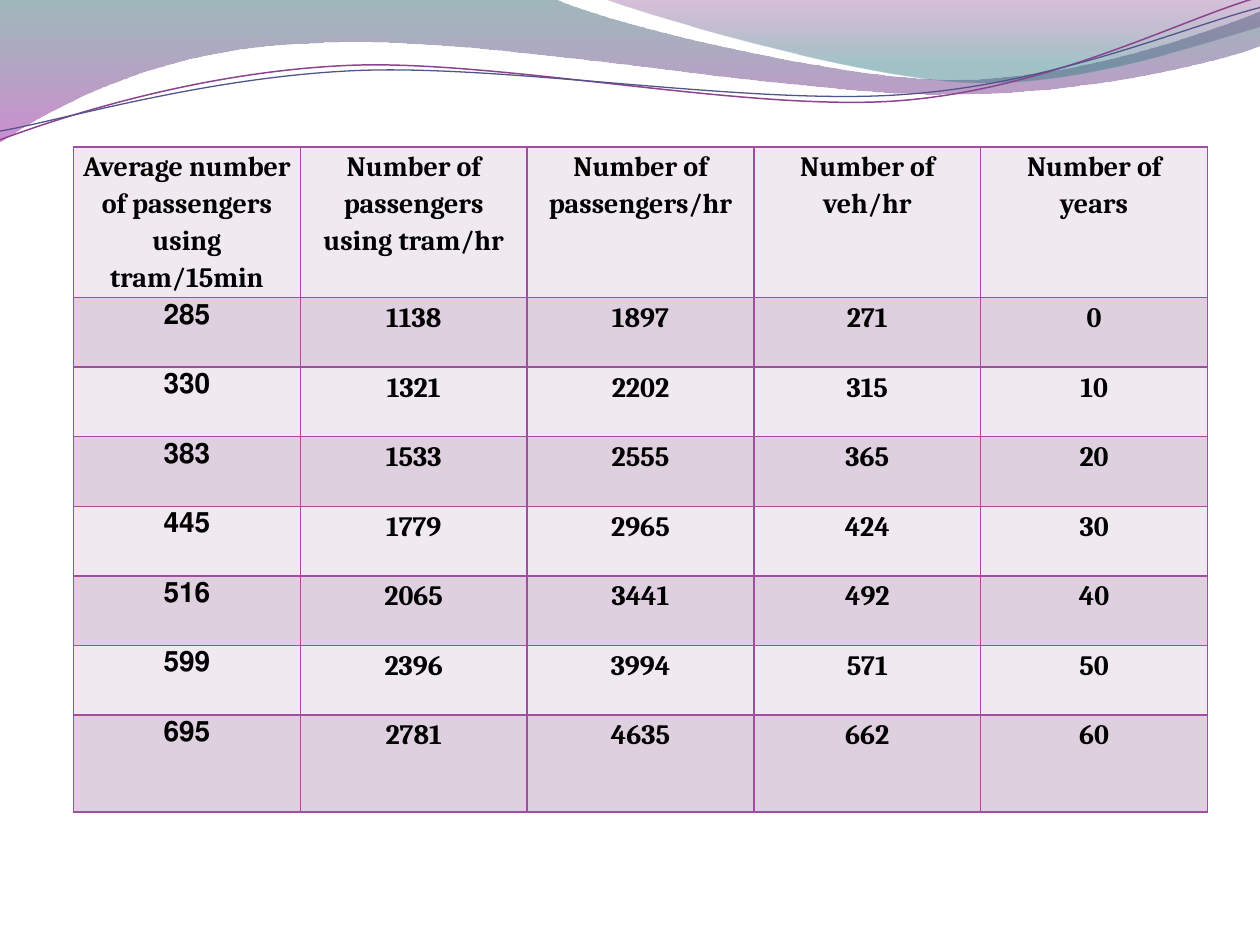
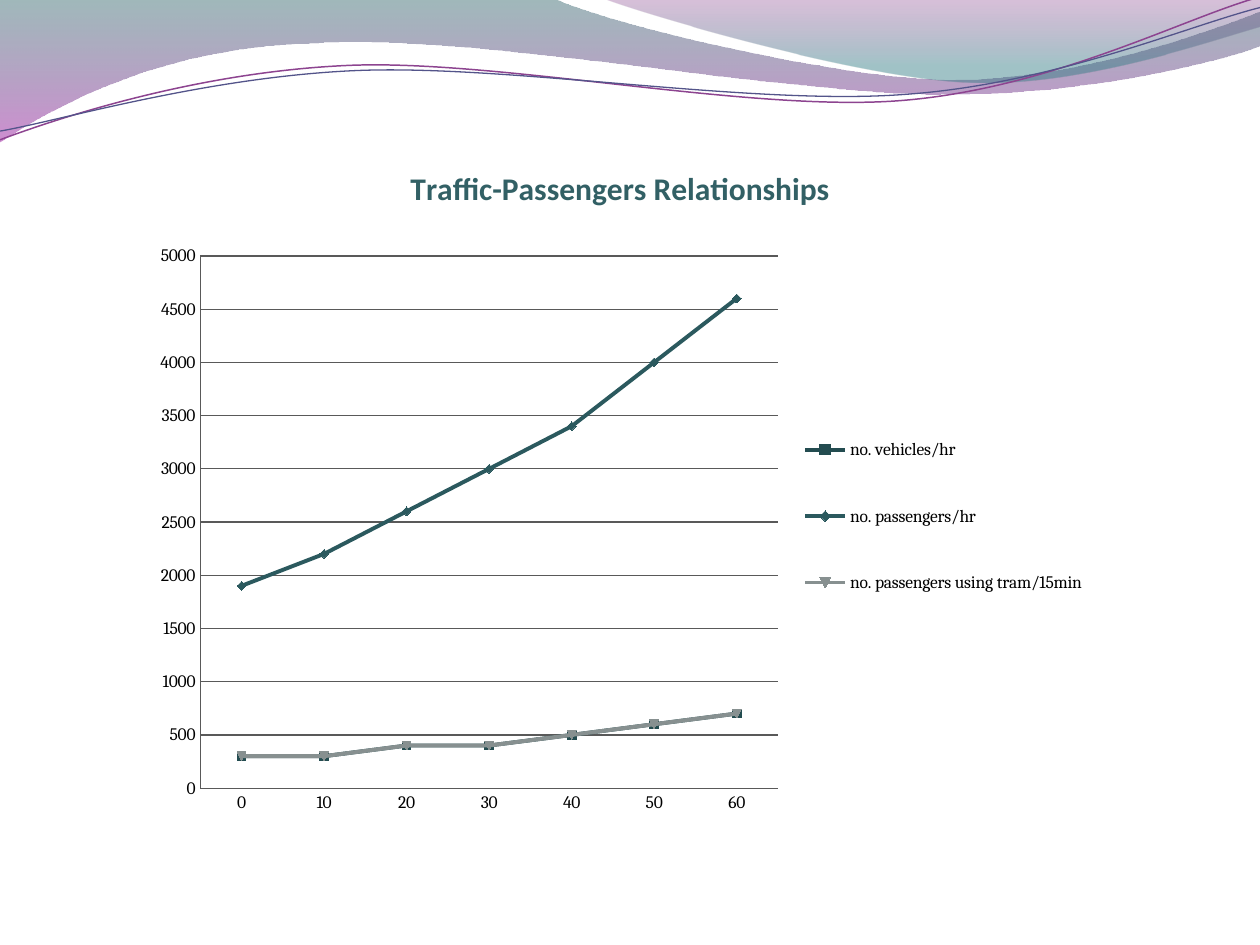
from dataclasses import dataclass

from lxml import etree
from pptx import Presentation
from pptx.chart.data import CategoryChartData
from pptx.dml.color import RGBColor
from pptx.enum.chart import XL_CHART_TYPE, XL_LEGEND_POSITION, XL_TICK_MARK
from pptx.enum.text import PP_ALIGN
from pptx.oxml.ns import qn
from pptx.util import Pt

LINE_CHART = XL_CHART_TYPE.LINE_MARKERS
LEGEND_RIGHT = XL_LEGEND_POSITION.RIGHT
NO_TICKS = XL_TICK_MARK.NONE
CENTER = PP_ALIGN.CENTER


@dataclass(frozen=True)
class Theme:
    body_font: str = "Cambria"
    title_font: str = "Calibri"
    table_size: int = 16
    title_size: int = 18
    chart_size: int = 10
    ink: str = "000000"
    title: str = "326065"
    border: str = "A04DA3"
    light_row: str = "F0E9F0"
    dark_row: str = "DFD0E0"
    grid: str = "595959"
    series: tuple = ("234C50", "2B595E", "879090")
    # Gradient stops: position, colour, opacity in percent
    wide_wave: tuple = ((0, "2D6368", 45), (1, "A530A9", 55))
    right_wave: tuple = ((0, "7F2F82", 30), (0.8, "2F7B82", 45))
    purple_line: str = "8D4490"
    indigo_line: str = "53548A"


THEME = Theme()

# Wave outlines in points: a start, then lines (one point) or curves (three points)
WIDE_WAVE = [
    (0, 0), [(316.8, -0.7)],
    [(342.7, 12.2), (478.1, 45.4), (545.8, 45.4)],
    [(614.2, 45.4), (689.8, 18.7), (720, 6.5)],
    [(720.7, 25.9)],
    [(707.8, 31.7), (626.4, 54.7), (537.1, 54)],
    [(447.8, 54), (275, 20.2), (185, 24.5)],
    [(92.9, 25.9), (33.1, 59.8), (-0.7, 81.4)],
]
RIGHT_WAVE = [
    (344.9, -0.7),
    [(366.5, 7.9), (491, 44.6), (553.7, 46.8)],
    [(616.3, 49.7), (691.9, 23), (720, 15.1)],
    [(720, 0)],
]
PURPLE_LINE = [
    (0, 79.9),
    [(34.6, 67), (113.8, 41), (199.4, 37.4)],
    [(284.4, 33.8), (427, 64.1), (513.4, 57.6)],
    [(599.8, 51.1), (675.4, 10.8), (718.6, -1.4)],
]
INDIGO_LINE = [
    (0, 74.9),
    [(33.8, 69.1), (118.1, 43.9), (203.8, 40.3)],
    [(290.2, 36.7), (429.8, 60.5), (516.2, 54)],
    [(601.9, 48.2), (677.5, 15.1), (720, 4.3)],
]

# Traffic study figures, shared by the table and the chart
TRAM_15MIN = [285, 330, 383, 445, 516, 599, 695]
TRAM_HOUR = [1138, 1321, 1533, 1779, 2065, 2396, 2781]
PASSENGERS = [1897, 2202, 2555, 2965, 3441, 3994, 4635]
VEHICLES = [271, 315, 365, 424, 492, 571, 662]
YEARS = [0, 10, 20, 30, 40, 50, 60]

TABLE_COLUMNS = {
    "Average number of passengers using tram/15min": TRAM_15MIN,
    "Number of passengers using tram/hr": TRAM_HOUR,
    "Number of passengers/hr": PASSENGERS,
    "Number of veh/hr": VEHICLES,
    "Number of years": YEARS,
}
CHART_SERIES = {
    "no. vehicles/hr": VEHICLES,
    "no. passengers/hr": PASSENGERS,
    "no. passengers using tram/15min": TRAM_15MIN,
}


def rgb(colour):
    return RGBColor.from_string(colour)


def write(frame, text, *, font, size, colour, bold=True, spacing=None, rtl=False):
    paragraph = frame.paragraphs[0]
    paragraph.alignment = CENTER
    if spacing:
        paragraph.line_spacing = spacing
    if rtl:
        paragraph._p.get_or_add_pPr().set("rtl", "1")
    run = paragraph.add_run()
    run.text = text
    run.font.name, run.font.size, run.font.bold = font, Pt(size), bold
    run.font.color.rgb = rgb(colour)


# Background waves

def add_outline(slide, outline, closed):
    """Draw the anchor points, then bend the sides that have control points."""
    (start_x, start_y), *segments = outline
    builder = slide.shapes.build_freeform(Pt(start_x), Pt(start_y))
    builder.add_line_segments([(Pt(x), Pt(y)) for *_, (x, y) in segments], close=closed)
    wave = builder.convert_to_shape()
    wave.shadow.inherit = False
    sides = list(wave._element.iter(qn("a:lnTo")))
    for side, segment in zip(sides, segments):
        if len(segment) == 3:
            curve = etree.Element(qn("a:cubicBezTo"))
            for x, y in segment:
                etree.SubElement(curve, qn("a:pt"),
                                 x=str(Pt(x) - wave.left), y=str(Pt(y) - wave.top))
            side.getparent().replace(side, curve)
    return wave


def add_wave_band(slide, outline, stops):
    band = add_outline(slide, outline, closed=True)
    band.line.fill.background()
    band.fill.gradient()
    band.fill.gradient_angle = 270
    for stop, (position, colour, _) in zip(band.fill.gradient_stops, stops):
        stop.position = position
        stop.color.rgb = rgb(colour)
    for tint, (_, _, opacity) in zip(band._element.iter(qn("a:srgbClr")), stops):
        etree.SubElement(tint, qn("a:alpha"), val=str(opacity * 1000))


def add_wave_line(slide, outline, colour, width):
    line = add_outline(slide, outline, closed=False)
    line.fill.background()
    line.line.color.rgb = rgb(colour)
    line.line.width = Pt(width)


def add_wave_slide(deck):
    slide = deck.slides.add_slide(deck.slide_layouts[6])
    add_wave_band(slide, WIDE_WAVE, THEME.wide_wave)
    add_wave_band(slide, RIGHT_WAVE, THEME.right_wave)
    add_wave_line(slide, PURPLE_LINE, THEME.purple_line, 0.85)
    add_wave_line(slide, INDIGO_LINE, THEME.indigo_line, 0.75)
    return slide


# Table

def add_borders(cell, colour, width):
    properties = cell._tc.get_or_add_tcPr()
    for index, side in enumerate(("lnL", "lnR", "lnT", "lnB")):
        border = etree.Element(qn(f"a:{side}"), w=str(Pt(width)))
        fill = etree.SubElement(border, qn("a:solidFill"))
        etree.SubElement(fill, qn("a:srgbClr"), val=colour)
        properties.insert(index, border)


def add_traffic_table(slide):
    rows = [list(TABLE_COLUMNS), *zip(*TABLE_COLUMNS.values())]
    heights = [86.1] + [39.75] * (len(rows) - 2) + [55.4]
    column_width = 129.6
    table = slide.shapes.add_table(
        len(rows), len(TABLE_COLUMNS), Pt(42), Pt(84),
        Pt(column_width * len(TABLE_COLUMNS)), Pt(sum(heights))).table
    table.first_row = table.horz_banding = False
    for column in table.columns:
        column.width = Pt(column_width)
    for r, (values, height) in enumerate(zip(rows, heights)):
        table.rows[r].height = Pt(height)
        for c, value in enumerate(values):
            cell = table.cell(r, c)
            cell.margin_left = cell.margin_right = Pt(5.4)
            cell.margin_top = cell.margin_bottom = Pt(0)
            cell.fill.solid()
            cell.fill.fore_color.rgb = rgb(THEME.dark_row if r % 2 else THEME.light_row)
            add_borders(cell, THEME.border, 1)
            write(cell.text_frame, str(value), font=THEME.body_font, size=THEME.table_size,
                  colour=THEME.ink, spacing=1.15, rtl=r == 0 or c == 0)


# Chart

def place(part, index, inner=False, **fractions):
    """Give a chart part a manual layout in fractions of the chart."""
    layout = part.find(qn("c:layout"))
    if layout is None:
        layout = etree.Element(qn("c:layout"))
        part.insert(index, layout)
    manual = etree.SubElement(layout, qn("c:manualLayout"))
    settings = {"layoutTarget": "inner"} if inner else {}
    settings |= {"xMode": "edge", "yMode": "edge"} | fractions
    for name, value in settings.items():
        etree.SubElement(manual, qn(f"c:{name}"), val=str(value))


def style_axis(axis):
    axis.major_tick_mark = axis.minor_tick_mark = NO_TICKS
    axis.format.line.color.rgb = rgb(THEME.grid)
    axis.format.line.width = Pt(0.75)


def add_traffic_chart(slide):
    data = CategoryChartData()
    data.categories = [str(year) for year in YEARS]
    for name, values in CHART_SERIES.items():
        data.add_series(name, [round(value, -2) for value in values])
    chart = slide.shapes.add_chart(LINE_CHART, Pt(66), Pt(84), Pt(570.2), Pt(401.8), data).chart
    chart.font.name, chart.font.size = THEME.body_font, Pt(THEME.chart_size)
    chart.font.color.rgb = rgb(THEME.ink)

    # Title, plot area and legend
    chart.has_title = True
    write(chart.chart_title.text_frame, "Traffic-Passengers Relationships",
          font=THEME.title_font, size=THEME.title_size, colour=THEME.title)
    place(chart.chart_title._element, 1, x=0.29, y=0.02)
    place(chart._chartSpace.chart.plotArea, 0, inner=True, x=0.085, y=0.155, w=0.579, h=0.757)
    chart.has_legend = True
    chart.legend.position = LEGEND_RIGHT
    chart.legend.include_in_layout = False
    place(chart.legend._element, 1, x=0.68, y=0.35, w=0.3, h=0.35)

    # Axes
    style_axis(chart.category_axis)
    scale = chart.value_axis
    style_axis(scale)
    scale.minimum_scale, scale.maximum_scale, scale.major_unit = 0, 5000, 500
    scale.has_major_gridlines = True
    scale.major_gridlines.format.line.color.rgb = rgb(THEME.grid)
    scale.major_gridlines.format.line.width = Pt(0.75)

    # Series
    chart.plots[0].vary_by_categories = False
    for series, colour in zip(chart.plots[0].series, THEME.series):
        series.smooth = False
        series.format.line.color.rgb = rgb(colour)
        series.format.line.width = Pt(2.25)
        series.marker.size = 5
        series.marker.format.fill.solid()
        series.marker.format.fill.fore_color.rgb = rgb(colour)
        series.marker.format.line.color.rgb = rgb(colour)


def main():
    deck = Presentation()
    deck.slide_width, deck.slide_height = Pt(720), Pt(540)
    add_traffic_table(add_wave_slide(deck))
    add_traffic_chart(add_wave_slide(deck))
    deck.save("out.pptx")


if __name__ == "__main__":
    main()
